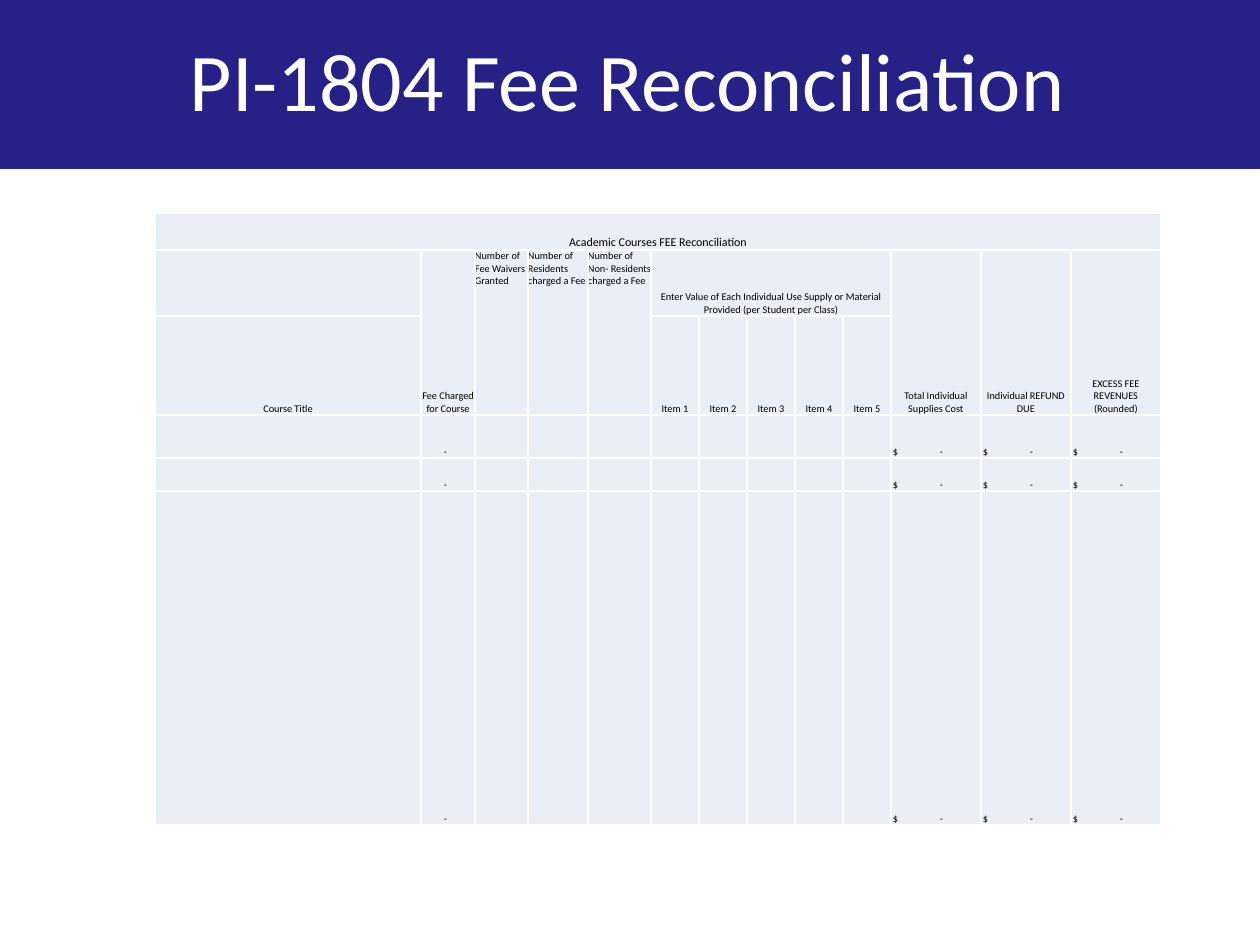
from lxml import etree
from pptx import Presentation
from pptx import util as u
from pptx.dml.color import RGBColor
from pptx.enum import shapes, text
from pptx.oxml import ns

PX = 914400 / 123
NAVY = RGBColor(0x26, 0x20, 0x87)
PALE_BLUE = RGBColor(0xEA, 0xEF, 0xF7)
WHITE = RGBColor(0xFF, 0xFF, 0xFF)
BLACK = RGBColor(0x00, 0x00, 0x00)


def px(*lengths):
    return [u.Emu(round(length * PX)) for length in lengths]


def add_run(paragraph, words, size, color):
    run = paragraph.add_run()
    run.text = words
    run.font.name = "Calibri"
    run.font.size = u.Pt(size)
    run.font.color.rgb = color


presentation = Presentation()
presentation.slide_width, presentation.slide_height = px(1260, 945)
slide = presentation.slides.add_slide(presentation.slide_layouts[6])

band = slide.shapes.add_shape(shapes.MSO_SHAPE.RECTANGLE, *px(0, 0, 1260, 169))
band.shadow.inherit = False
band.fill.solid()
band.fill.fore_color.rgb = NAVY
band.line.fill.background()

title = slide.shapes.add_textbox(*px(74, 0, 1107, 169))
title.text_frame.word_wrap = True
title.text_frame.vertical_anchor = text.MSO_ANCHOR.MIDDLE
paragraph = title.text_frame.paragraphs[0]
paragraph.alignment = text.PP_ALIGN.CENTER
paragraph.line_spacing = 0.9
add_run(paragraph, "PI-1804 Fee Reconciliation", 48, WHITE)

column_widths = [266, 54, 53, 60, 63] + [48] * 5 + [90] * 3
row_heights = [37, 66, 99, 43, 33, 334]
frame = slide.shapes.add_table(
    len(row_heights), len(column_widths),
    *px(155, 213, sum(column_widths), sum(row_heights)))
table = frame.table
table.first_row = False
table.horz_banding = False
for column, width in zip(table.columns, px(*column_widths)):
    column.width = width
for row, height in zip(table.rows, px(*row_heights)):
    row.height = height

table.cell(0, 0).merge(table.cell(0, 12))
table.cell(1, 5).merge(table.cell(1, 9))
for column in [1, 2, 3, 4, 10, 11, 12]:
    table.cell(1, column).merge(table.cell(2, column))

labels = {
    (0, 0): "Academic Courses FEE Reconciliation",
    (1, 1): "Fee Charged for Course",
    (1, 2): "Number of Fee Waivers Granted",
    (1, 3): "Number of Residents charged a Fee",
    (1, 4): "Number of Non- Residents charged a Fee",
    (1, 5): "Enter Value of Each Individual Use Supply or Material "
            "Provided (per Student per Class)",
    (1, 10): "Total Individual Supplies Cost",
    (1, 11): "Individual REFUND DUE",
    (1, 12): "EXCESS FEE REVENUES (Rounded)",
    (2, 0): "Course Title",
}
for item in range(1, 6):
    labels[2, 4 + item] = f"Item {item}"
for row in range(3, 6):
    labels[row, 1] = "-"
    for column in range(10, 13):
        labels[row, column] = "$\t-"

for row in range(len(row_heights)):
    for column in range(len(column_widths)):
        cell = table.cell(row, column)
        cell.margin_left = cell.margin_right = 0
        cell.margin_top = cell.margin_bottom = 0
        properties = cell._tc.get_or_add_tcPr()
        for side in ["lnL", "lnR", "lnT", "lnB"]:
            border = etree.SubElement(properties, ns.qn(f"a:{side}"), w=str(u.Pt(1)))
            paint = etree.SubElement(border, ns.qn("a:solidFill"))
            etree.SubElement(paint, ns.qn("a:srgbClr"), val=str(WHITE))
        cell.fill.solid()
        cell.fill.fore_color.rgb = PALE_BLUE

        paragraph = cell.text_frame.paragraphs[0]
        if (row, column) not in labels:
            etree.SubElement(paragraph._p, ns.qn("a:endParaRPr"), sz="600")
            continue
        counted = row == 1 and column in (2, 3, 4)
        cell.vertical_anchor = text.MSO_ANCHOR.TOP if counted else text.MSO_ANCHOR.BOTTOM
        if row < 3 and not counted:
            paragraph.alignment = text.PP_ALIGN.CENTER
        if row >= 3:
            cell.margin_left = px(23 if column == 1 else 2)[0]
            if column >= 10:
                tabs = etree.SubElement(paragraph._p.get_or_add_pPr(), ns.qn("a:tabLst"))
                etree.SubElement(tabs, ns.qn("a:tab"), pos=str(px(47)[0]), algn="l")
        add_run(paragraph, labels[row, column], 7 if row == 0 else 6, BLACK)

presentation.save("out.pptx")
